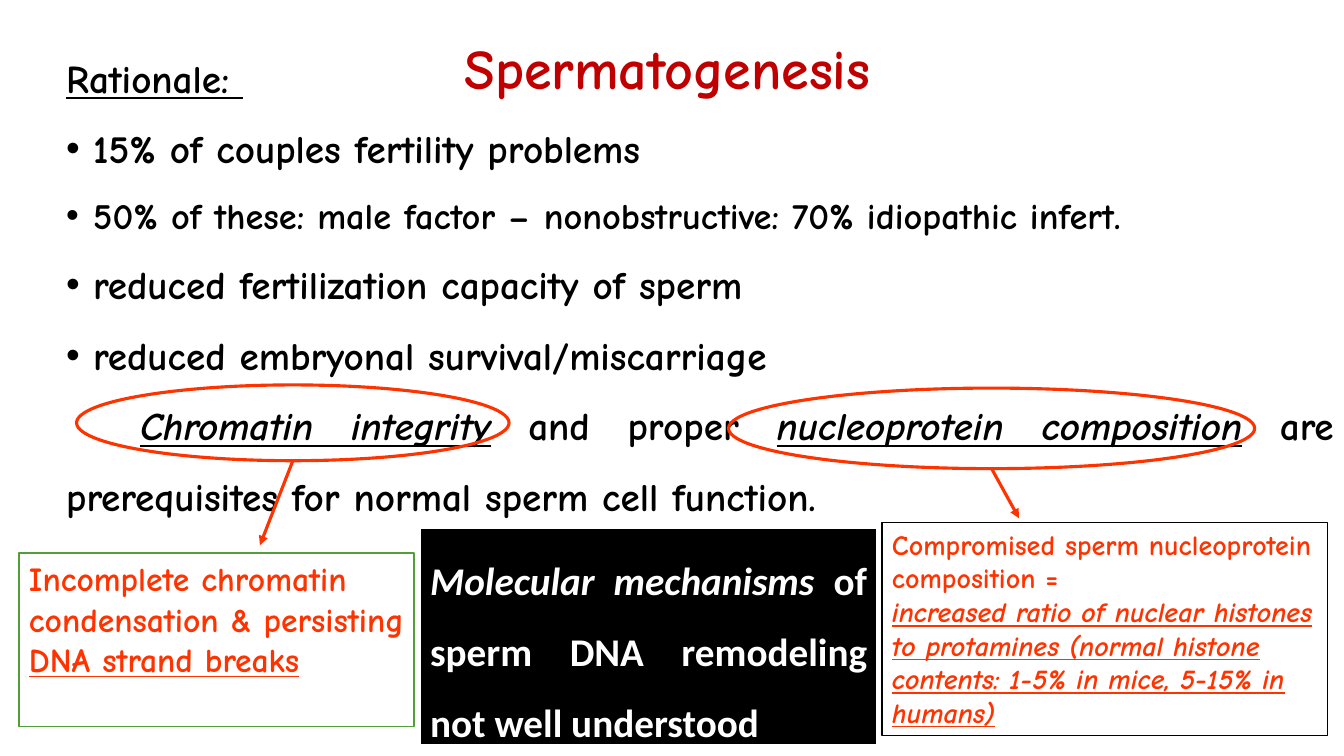
from pptx import Presentation
from pptx.dml.color import RGBColor
from pptx.enum.shapes import MSO_CONNECTOR as Connector, MSO_SHAPE as Shape
from pptx.enum.text import MSO_ANCHOR as Anchor, PP_ALIGN as Align
from pptx.oxml.ns import qn
from pptx.util import Cm, Pt
from lxml.etree import SubElement

THEME = {
    "comic": "Comic Neue", "plain": "Calibri",
    "title": 40, "body": 28, "tight": 26, "finding": 24, "detail": 20,
    "red": "C00000", "orange": "FF3300", "green": "549E39",
    "black": "000000", "white": "FFFFFF",
    "ring": 2.25, "frame": 1, "edge": 1.5,
}

TITLE = "Spermatogenesis"
HEADING = "Rationale: "
BULLETS = [
    ("15% of couples fertility problems", "body"),
    ("50% of these: male factor – nonobstructive: 70% idiopathic infert.", "tight"),
    ("reduced fertilization capacity of sperm", "body"),
    ("reduced embryonal survival/miscarriage", "body"),
]
CONCLUSION = [
    ("Chromatin integrity", "iu"), (" and proper ", ""),
    ("nucleoprotein composition", "iu"),
    (" are prerequisites for normal sperm cell function.", ""),
]
CHROMATIN = [[("Incomplete chromatin condensation & persisting ", ""),
              ("DNA strand breaks", "u")]]
NUCLEOPROTEIN = [
    [("Compromised sperm nucleoprotein composition =", "")],
    [("increased ratio of nuclear histones to protamines (normal histone "
      "contents: 1-5% in mice, 5-15% in humans)", "iu")],
]
MECHANISMS = [("Molecular mechanisms", "i"),
              (" of sperm DNA remodeling not well understood", "")]

TITLE_AREA = (4.83, 0.71, 23.98, 1.96)
BODY_AREA = (1.42, 0.64, 32.44, 12.62)
MECHANISMS_AREA = (10.59, 13.31, 11.51, 5.46)
CALLOUTS = [
    {"ring": (1.93, 9.7, 10.9, 1.91), "tip": (6.55, 13.74),
     "box": (0.48, 13.94, 9.96, 4.37), "frame": "green",
     "size": "finding", "text": CHROMATIN},
    {"ring": (18.36, 9.78, 13.26, 2.03), "tip": (25.68, 13.06),
     "box": (22.23, 13.16, 11.23, 5.38), "frame": "black",
     "size": "detail", "text": NUCLEOPROTEIN},
]
BULLET_INDENT = 0.68
CONCLUSION_INDENT = 1.86


def color(name):
    return RGBColor.from_string(THEME[name])


def set_line(shape, name, width):
    shape.line.color.rgb = color(name)
    shape.line.width = Pt(THEME[width])


def add_para(frame, parts, size, ink, font="comic", align=Align.LEFT, spacing=None):
    first = frame.paragraphs[0]
    para = frame.add_paragraph() if first.runs else first
    para.alignment = align
    if spacing:
        para.line_spacing = spacing
    for text, style in parts:
        span = para.add_run()
        span.text = text
        span.font.name = THEME[font]
        span.font.size = Pt(THEME[size])
        span.font.bold = True
        span.font.italic = "i" in style
        span.font.underline = "u" in style
        span.font.color.rgb = color(ink)
    return para


def indent(para, margin, first_line, bullet=None):
    props = para._p.get_or_add_pPr()
    props.set("marL", str(Cm(margin)))
    props.set("indent", str(Cm(first_line)))
    if bullet:
        SubElement(props, qn("a:buFont")).set("typeface", "Arial")
        SubElement(props, qn("a:buChar")).set("char", bullet)


def add_text(slide, area):
    frame = slide.shapes.add_textbox(*map(Cm, area)).text_frame
    frame.word_wrap = True
    return frame


def add_panel(slide, kind, area, fill, line, width):
    panel = slide.shapes.add_shape(kind, *map(Cm, area))
    panel.shadow.inherit = False
    if fill:
        panel.fill.solid()
        panel.fill.fore_color.rgb = color(fill)
    else:
        panel.fill.background()
    set_line(panel, line, width)
    frame = panel.text_frame
    frame.word_wrap = True
    frame.vertical_anchor = Anchor.TOP
    return frame


def add_arrow(slide, start, tip):
    arrow = slide.shapes.add_connector(Connector.STRAIGHT, *map(Cm, start + tip))
    set_line(arrow, "orange", "ring")
    SubElement(arrow.line._get_or_add_ln(), qn("a:tailEnd")).set("type", "triangle")
    SubElement(arrow._element.spPr, qn("a:effectLst"))


def add_callout(slide, callout):
    left, top, width, height = callout["ring"]
    add_panel(slide, Shape.OVAL, callout["ring"], None, "orange", "ring")
    frame = add_panel(slide, Shape.RECTANGLE, callout["box"], "white",
                      callout["frame"], "frame")
    for parts in callout["text"]:
        add_para(frame, parts, callout["size"], "orange")
    add_arrow(slide, (left + width / 2, top + height), callout["tip"])


def add_body(slide):
    frame = add_text(slide, BODY_AREA)
    layout = {"ink": "black", "align": Align.JUSTIFY, "spacing": 1.5}
    add_para(frame, [(HEADING, "u")], "body", **layout)
    for text, size in BULLETS:
        para = add_para(frame, [(text, "")], size, **layout)
        indent(para, BULLET_INDENT, -BULLET_INDENT, "•")
    indent(add_para(frame, CONCLUSION, "body", **layout), 0, CONCLUSION_INDENT)


def main():
    deck = Presentation()
    deck.slide_width, deck.slide_height = Cm(33.87), Cm(19.05)
    slide = deck.slides.add_slide(deck.slide_layouts[6])
    add_para(add_text(slide, TITLE_AREA), [(TITLE, "")], "title", "red",
             align=Align.CENTER)
    add_body(slide)
    for callout in CALLOUTS:
        add_callout(slide, callout)
    frame = add_panel(slide, Shape.RECTANGLE, MECHANISMS_AREA, "black", "white", "edge")
    add_para(frame, MECHANISMS, "body", "white", "plain", Align.JUSTIFY, 1.5)
    deck.save("out.pptx")


if __name__ == "__main__":
    main()
